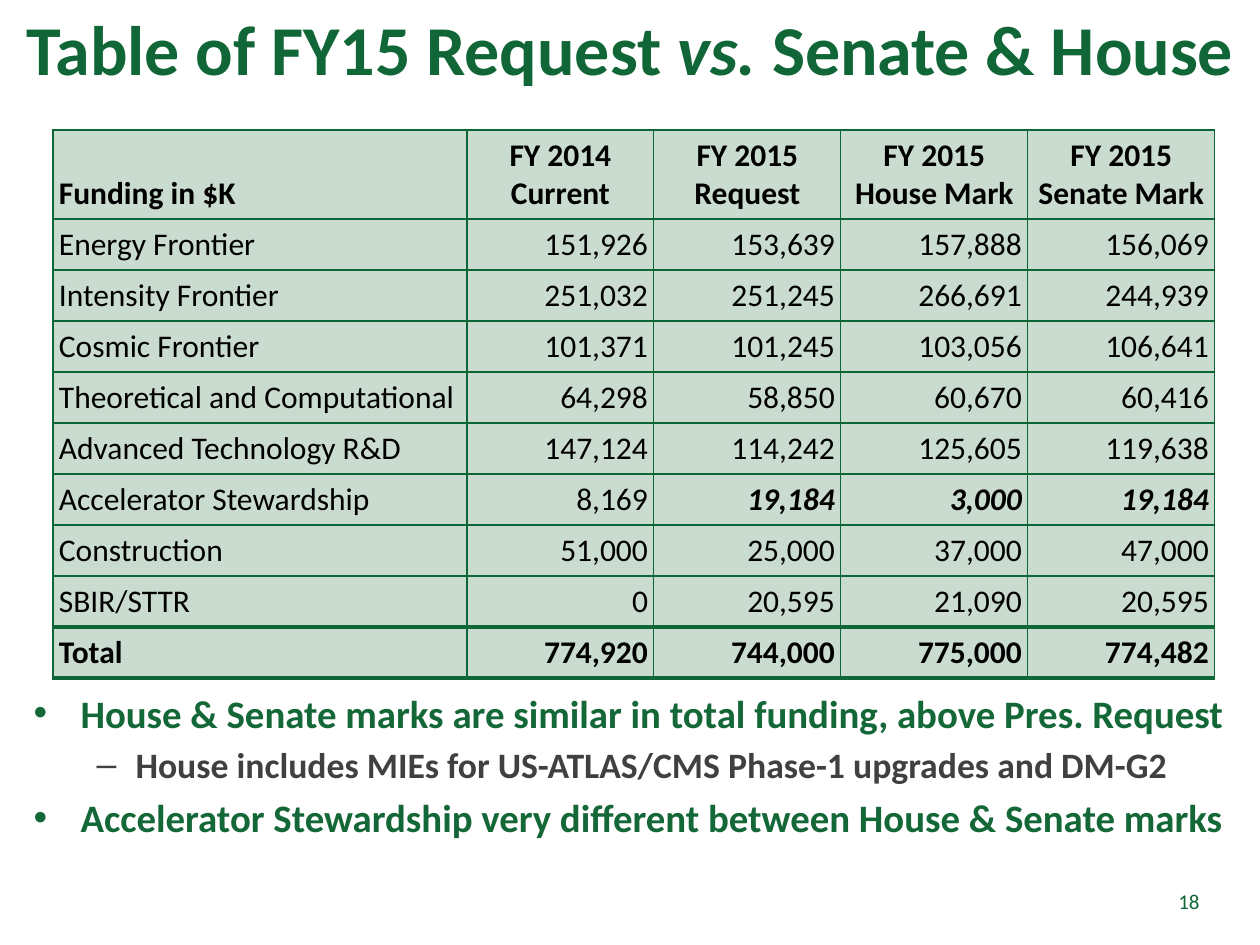
from dataclasses import dataclass

from lxml import etree
from pptx import Presentation
from pptx.dml.color import RGBColor
from pptx.enum.text import MSO_ANCHOR, MSO_AUTO_SIZE, PP_ALIGN
from pptx.oxml.ns import qn
from pptx.util import Emu, Pt

LEFT, CENTER, RIGHT = PP_ALIGN.LEFT, PP_ALIGN.CENTER, PP_ALIGN.RIGHT
MIDDLE, BOTTOM = MSO_ANCHOR.MIDDLE, MSO_ANCHOR.BOTTOM
NO_AUTOFIT = MSO_AUTO_SIZE.NONE

TITLE_GREEN = RGBColor(0x10, 0x66, 0x36)
BULLET_GREEN = RGBColor(0x14, 0x67, 0x37)
NUMBER_GREEN = RGBColor(0x0F, 0x66, 0x36)
BORDER_GREEN = RGBColor(0x0D, 0x66, 0x35)
CELL_GREEN = RGBColor(0xCA, 0xDB, 0xCF)
GRAY = RGBColor(0x40, 0x40, 0x40)
BLACK = RGBColor(0, 0, 0)

FONT = "Calibri"
PIXELS_PER_INCH = 126
THIN, THICK = 0.75, 2
LABEL_WIDTH, AMOUNT_WIDTH = 414, 187
HEADER_HEIGHT, ROW_HEIGHT = 89, 51
CELL_MARGIN = 6


@dataclass(frozen=True)
class FundingRow:
    label: str
    amounts: tuple[str, ...]
    bold: bool = False
    emphasized_from: int = 5


@dataclass(frozen=True)
class Bullet:
    text: str
    level: int
    character: str
    margin: int
    hanging: int
    size: float
    color: RGBColor
    space_before: float


HEADERS = ("Funding in $K", "FY 2014 Current", "FY 2015 Request",
           "FY 2015 House Mark", "FY 2015 Senate Mark")
FUNDING = (
    FundingRow(HEADERS[0], HEADERS[1:], bold=True),
    FundingRow("Energy Frontier", ("151,926", "153,639", "157,888", "156,069")),
    FundingRow("Intensity Frontier", ("251,032", "251,245", "266,691", "244,939")),
    FundingRow("Cosmic Frontier", ("101,371", "101,245", "103,056", "106,641")),
    FundingRow("Theoretical and Computational", ("64,298", "58,850", "60,670", "60,416")),
    FundingRow("Advanced Technology R&D", ("147,124", "114,242", "125,605", "119,638")),
    FundingRow("Accelerator Stewardship", ("8,169", "19,184", "3,000", "19,184"),
               emphasized_from=2),
    FundingRow("Construction", ("51,000", "25,000", "37,000", "47,000")),
    FundingRow("SBIR/STTR", ("0", "20,595", "21,090", "20,595")),
    FundingRow("Total", ("774,920", "744,000", "775,000", "774,482"), bold=True),
)
BULLETS = (
    Bullet("House & Senate marks are similar in total funding, above Pres. Request",
           0, "•", 47, 47, 22.2, BULLET_GREEN, 0),
    Bullet("House includes MIEs for US-ATLAS/CMS Phase-1 upgrades and DM-G2",
           1, "–", 102, 39, 20.4, GRAY, 4),
    Bullet("Accelerator Stewardship very different between House & Senate marks",
           0, "•", 47, 47, 22.2, BULLET_GREEN, 4.5),
)


def px(length: int) -> Emu:
    return Emu(round(length * 914400 / PIXELS_PER_INCH))


def set_format(target, values: dict) -> None:
    for name, value in values.items():
        setattr(target, name, value)


def place(shape, left: int, top: int, width: int, height: int) -> None:
    set_format(shape, {"left": px(left), "top": px(top),
                       "width": px(width), "height": px(height)})


def add_run(paragraph, text: str, size: float, color: RGBColor,
            bold: bool = False, italic: bool = False) -> None:
    run = paragraph.add_run()
    run.text = text
    set_format(run.font, {"name": FONT, "size": Pt(size), "bold": bold, "italic": italic})
    run.font.color.rgb = color


def add_border(cell, side: str, width: float, color: RGBColor) -> None:
    properties = cell._tc.get_or_add_tcPr()
    line = etree.SubElement(properties, qn(f"a:ln{side}"), w=str(Pt(width)))
    fill = etree.SubElement(line, qn("a:solidFill"))
    etree.SubElement(fill, qn("a:srgbClr"), val=str(color))


def fill_title(title) -> None:
    place(title, 0, 0, 1260, 95)
    set_format(title.text_frame, {"vertical_anchor": MIDDLE, "auto_size": NO_AUTOFIT})
    paragraph = title.text_frame.paragraphs[0]
    paragraph.alignment = CENTER
    for text, italic in (("Table of FY15 Request ", False), ("vs.", True),
                         (" Senate & House", False)):
        add_run(paragraph, text, 40, TITLE_GREEN, bold=True, italic=italic)


def fill_bullets(body) -> None:
    place(body, 21, 683, 1218, 179)
    frame = body.text_frame
    frame.auto_size = NO_AUTOFIT
    for index, bullet in enumerate(BULLETS):
        paragraph = frame.add_paragraph() if index else frame.paragraphs[0]
        properties = paragraph._p.get_or_add_pPr()
        properties.set("marL", str(px(bullet.margin)))
        properties.set("indent", str(px(-bullet.hanging)))
        etree.SubElement(properties, qn("a:buChar"), char=bullet.character)
        set_format(paragraph, {"level": bullet.level, "alignment": LEFT,
                               "space_before": Pt(bullet.space_before)})
        add_run(paragraph, bullet.text, bullet.size, bullet.color, bold=True)


def fill_cell(cell, text: str, alignment, bold: bool, italic: bool,
              top: float, bottom: float) -> None:
    margin = px(CELL_MARGIN)
    set_format(cell, {"vertical_anchor": BOTTOM, "margin_left": margin,
                      "margin_right": margin, "margin_top": margin,
                      "margin_bottom": margin})
    for side, width in (("L", THIN), ("R", THIN), ("T", top), ("B", bottom)):
        add_border(cell, side, width, NUMBER_GREEN if width == THICK else BORDER_GREEN)
    cell.fill.solid()
    cell.fill.fore_color.rgb = CELL_GREEN
    paragraph = cell.text_frame.paragraphs[0]
    paragraph.alignment = alignment
    add_run(paragraph, text, 18, BLACK, bold, italic)


def add_funding_table(slide) -> None:
    last = len(FUNDING) - 1
    widths = [LABEL_WIDTH] + [AMOUNT_WIDTH] * (len(HEADERS) - 1)
    heights = [HEADER_HEIGHT] + [ROW_HEIGHT] * last
    table = slide.shapes.add_table(len(heights), len(widths), px(53), px(130),
                                   px(sum(widths)), px(sum(heights))).table
    for column, width in zip(table.columns, widths):
        column.width = px(width)
    for row_index, funding in enumerate(FUNDING):
        table.rows[row_index].height = px(heights[row_index])
        top = THICK if row_index == last else THIN
        bottom = THICK if row_index >= last - 1 else THIN
        amount_alignment = RIGHT if row_index else CENTER
        for column_index, text in enumerate((funding.label, *funding.amounts)):
            emphasized = column_index >= funding.emphasized_from
            fill_cell(table.cell(row_index, column_index), text,
                      amount_alignment if column_index else LEFT,
                      funding.bold or emphasized, emphasized, top, bottom)


def add_slide_number(slide) -> None:
    box = slide.shapes.add_textbox(px(1159), px(876), px(53), px(50))
    set_format(box.text_frame, {"word_wrap": True, "vertical_anchor": MIDDLE})
    paragraph = box.text_frame.paragraphs[0]
    paragraph.alignment = RIGHT
    add_run(paragraph, "18", 12, NUMBER_GREEN)


def main() -> None:
    presentation = Presentation()
    set_format(presentation, {"slide_width": px(1260), "slide_height": px(945)})
    slide = presentation.slides.add_slide(presentation.slide_layouts[1])
    fill_title(slide.shapes.title)
    fill_bullets(slide.placeholders[1])
    add_funding_table(slide)
    add_slide_number(slide)
    presentation.save("out.pptx")


if __name__ == "__main__":
    main()
